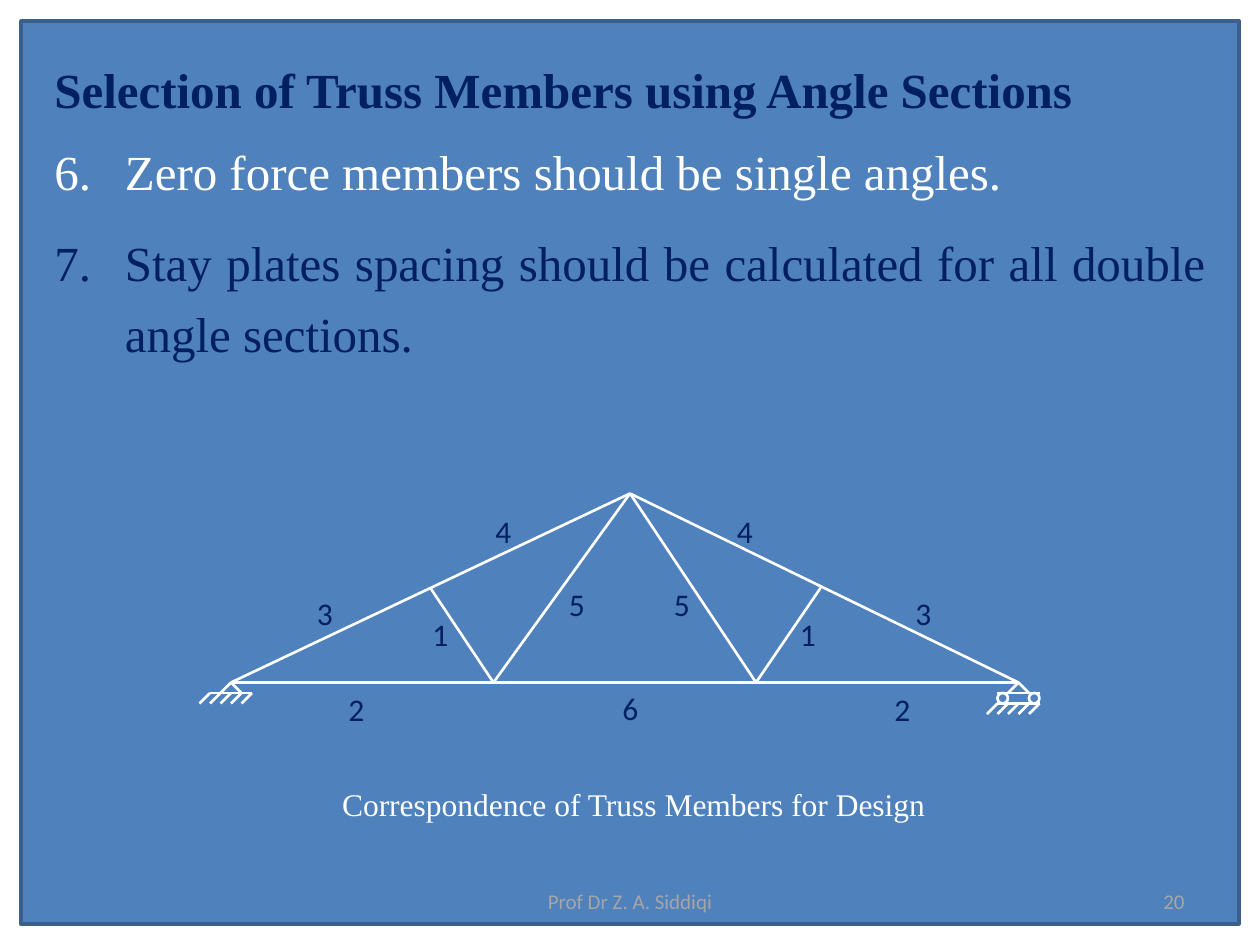
from typing import NamedTuple

from lxml import etree
from pptx import Presentation
from pptx import util as u
from pptx.dml.color import RGBColor
from pptx.enum import shapes, text
from pptx.oxml.ns import qn

CELL = u.Inches(1) / 12  # the slide is 120 columns by 90 rows
WHITE, NAVY, BLUE, EDGE, GREY = "FFFFFF", "002060", "4F81BD", "3A5F8C", "A6A6A6"
SERIF, SANS = "Times New Roman", "Calibri"
LEFT, MID, RIGHT, JUST = (text.PP_ALIGN.LEFT, text.PP_ALIGN.CENTER,
                          text.PP_ALIGN.RIGHT, text.PP_ALIGN.JUSTIFY)


class Node(NamedTuple):
    x: float
    y: float


class Box(NamedTuple):
    x: float
    y: float
    w: float
    h: float


class Style(NamedTuple):
    font: str
    size: float
    color: str
    bold: bool = False


class Label(NamedTuple):
    word: str
    x: float
    y: float


class Para(NamedTuple):
    words: str
    style: Style
    align: text.PP_ALIGN
    indent: float
    before: float
    after: float
    start: int = 0


HEEL, TOE, PEAK = Node(22, 65), Node(97, 65), Node(60, 47)
FOOT_L, FOOT_R = Node(47, 65), Node(72, 65)
RAFT_L, RAFT_R = Node(41, 56), Node(78.15, 56)
MEMBERS = [(HEEL, TOE), (HEEL, PEAK), (TOE, PEAK), (PEAK, FOOT_L),
           (PEAK, FOOT_R), (FOOT_L, RAFT_L), (FOOT_R, RAFT_R)]

LABELS = [Label("1", 40, 58), Label("1", 75, 58),
          Label("2", 32, 65.1), Label("2", 84, 65.1),
          Label("3", 29, 56), Label("3", 86, 56),
          Label("4", 46, 48.2), Label("4", 69, 48.2),
          Label("5", 53, 55.1), Label("5", 63, 55.1),
          Label("6", 58.1, 65)]

HEAD = Style(SERIF, 28, NAVY, True)
BODY = [
    Para("Selection of Truss Members using Angle Sections", HEAD, LEFT, 0.67, 3.5, 0),
    Para("Zero force members should be single angles.",
         Style(SERIF, 28, WHITE), JUST, 0.56, 6, 6, 6),
    Para("Stay plates spacing should be calculated for all double angle sections.",
         Style(SERIF, 28, NAVY), JUST, 0.56, 6, 6, 6),
]


def cells(*nums: float) -> list[int]:
    return [round(n * CELL) for n in nums]


def rgb(code: str) -> RGBColor:
    return RGBColor.from_string(code)


def add_line(slide, a: Node, b: Node) -> None:
    line = slide.shapes.add_connector(shapes.MSO_CONNECTOR.STRAIGHT, *cells(*a, *b))
    line.line.color.rgb = rgb(WHITE)
    line.line.width = u.Pt(1.5)
    etree.SubElement(line._element.spPr, qn("a:effectLst"))


def add_shape(slide, kind, box: Box, edge: str, width: float, fill: str = "") -> None:
    shape = slide.shapes.add_shape(kind, *cells(*box))
    shape.shadow.inherit = False
    if fill:
        shape.fill.solid()
        shape.fill.fore_color.rgb = rgb(fill)
    else:
        shape.fill.background()
    shape.line.color.rgb = rgb(edge)
    shape.line.width = u.Pt(width)


def add_frame(slide, box: Box, wrap: bool):
    frame = slide.shapes.add_textbox(*cells(*box)).text_frame
    frame.word_wrap = wrap
    return frame


def add_run(para, words: str, style: Style) -> None:
    run = para.add_run()
    run.text = words
    run.font.name, run.font.size = style.font, u.Pt(style.size)
    run.font.bold = style.bold
    run.font.color.rgb = rgb(style.color)


def add_text(slide, box: Box, words: str, style: Style, align=LEFT) -> None:
    para = add_frame(slide, box, False).paragraphs[0]
    para.alignment = align
    add_run(para, words, style)


def add_body(slide, box: Box, items: list[Para]) -> None:
    frame = add_frame(slide, box, True)
    for i, item in enumerate(items):
        para = frame.add_paragraph() if i else frame.paragraphs[0]
        para.alignment, para.line_spacing = item.align, 1.2
        para.space_before, para.space_after = u.Pt(item.before), u.Pt(item.after)
        props = para._p.get_or_add_pPr()
        props.set("marL", str(u.Inches(item.indent)))
        props.set("indent", str(-u.Inches(item.indent)))
        if item.start:
            etree.SubElement(props, qn("a:buAutoNum"), type="arabicPeriod",
                             startAt=str(item.start))
        add_run(para, item.words, item.style)


def add_ground(slide, x: float, y: float) -> None:
    """Draw a ground line four columns long with hatching below it."""
    add_line(slide, Node(x, y), Node(x + 4, y))
    for col in range(5):
        add_line(slide, Node(x + col, y), Node(x + col - 1, y + 1))


def add_legs(slide, top: Node) -> None:
    for side in (-1, 1):
        add_line(slide, top, Node(top.x + side, top.y + 1))


def add_pin(slide, top: Node) -> None:
    add_legs(slide, top)
    add_ground(slide, top.x - 2, top.y + 1)


def add_roller(slide, top: Node) -> None:
    x, y = top.x - 2, top.y + 1
    add_legs(slide, top)
    add_line(slide, Node(x, y), Node(x + 4, y))
    add_ground(slide, x, y + 1)
    for col in (0, 3):
        add_shape(slide, shapes.MSO_SHAPE.OVAL, Box(x + col, y, 1, 1), WHITE, 1.5)


def main() -> None:
    deck = Presentation()
    deck.slide_width, deck.slide_height = cells(120, 90)
    slide = deck.slides.add_slide(deck.slide_layouts[6])

    add_shape(slide, shapes.MSO_SHAPE.RECTANGLE, Box(2, 2, 116, 86), EDGE, 2, BLUE)
    add_body(slide, Box(4, 4, 112, 83), BODY)
    for a, b in MEMBERS:
        add_line(slide, a, b)
    add_pin(slide, HEEL)
    add_roller(slide, TOE)
    for tag in LABELS:
        add_text(slide, Box(tag.x, tag.y, 4, 4.8), tag.word, Style(SANS, 18, NAVY))
    add_text(slide, Box(31.4, 74.2, 58.6, 4.8),
             "Correspondence of Truss Members for Design", Style(SERIF, 18, WHITE))
    note = Style(SANS, 12, GREY)
    add_text(slide, Box(41, 84, 38, 3.6), "Prof Dr Z. A. Siddiqi", note, MID)
    add_text(slide, Box(86, 84, 28, 3.6), "20", note, RIGHT)
    deck.save("out.pptx")


if __name__ == "__main__":
    main()
